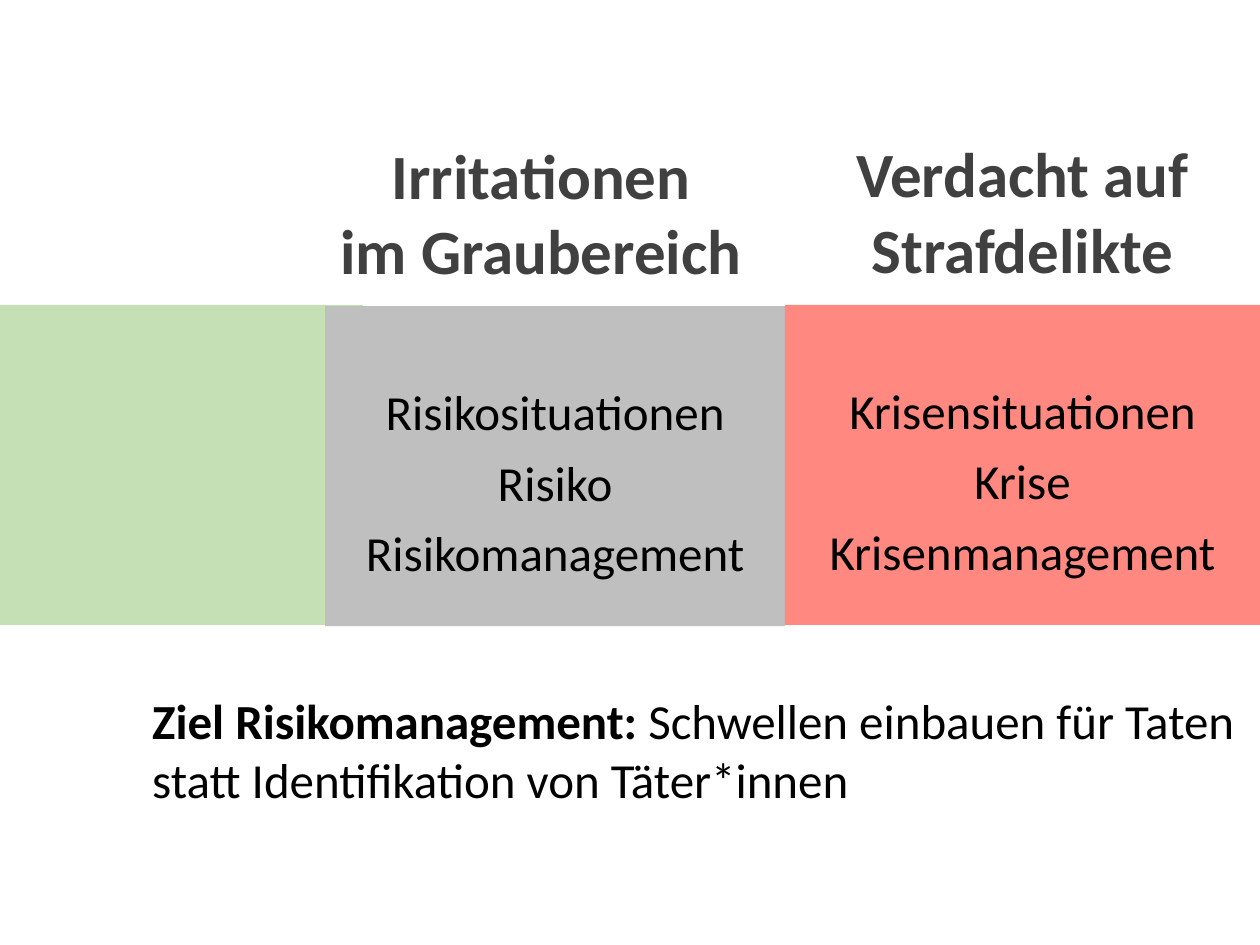
from dataclasses import dataclass

from lxml.etree import SubElement
from pptx import Presentation
from pptx.dml.color import RGBColor
from pptx.enum.shapes import MSO_SHAPE
from pptx.enum.text import MSO_ANCHOR, MSO_AUTO_SIZE, PP_ALIGN
from pptx.oxml.ns import qn
from pptx.util import Inches, Pt

COLUMNS, ROWS = 100, 75


@dataclass(frozen=True)
class Theme:
    font: str = "Calibri"
    heading_size: int = 36
    text_size: int = 28
    heading: str = "404040"
    text: str = "000000"
    green: str = "C5E0B4"
    grey: str = "BFBFBF"
    red: str = "FF6257"


@dataclass(frozen=True)
class Box:
    col: float
    row: float
    cols: float
    rows: float


@dataclass(frozen=True)
class Zone:
    box: Box
    fill: str
    opacity: int = 100
    terms: tuple[str, ...] = ()


@dataclass(frozen=True)
class Heading:
    placeholder: int
    box: Box
    text: str


THEME = Theme()

HEADINGS = (
    Heading(1, Box(21.7, 10.3, 42.5, 15.1), "Irritationen\vim Graubereich"),
    Heading(3, Box(59.9, 10.2, 42.5, 15.1), "Verdacht auf Strafdelikte"),
)

ZONES = (
    Zone(Box(-0.3, 24.2, 29.1, 25.4), THEME.green),
    Zone(Box(25.8, 24.3, 36.5, 25.4), THEME.grey,
         terms=("Risikosituationen", "Risiko", "Risikomanagement")),
    Zone(Box(62.3, 24.2, 37.7, 25.4), THEME.red, 75,
         ("Krisensituationen", "Krise", "Krisenmanagement")),
)

GOAL_BOX = Box(11.1, 55.5, 91.3, 12.3)


def place(prs, box: Box) -> tuple[int, int, int, int]:
    col, row = prs.slide_width / COLUMNS, prs.slide_height / ROWS
    return (round(box.col * col), round(box.row * row),
            round(box.cols * col), round(box.rows * row))


def add_text(p, text: str, *, size: int = THEME.text_size, color: str = THEME.text,
             bold: bool = False, align=PP_ALIGN.LEFT, before: float = 0,
             spacing: float = 1.0) -> None:
    p.alignment = align
    p.space_before = Pt(before)
    p.line_spacing = spacing
    for i, line in enumerate(text.split("\v")):
        if i:
            p.add_line_break()
        r = p.add_run()
        r.text = line
        r.font.name = THEME.font
        r.font.size = Pt(size)
        r.font.bold = bold
        r.font.color.rgb = RGBColor.from_string(color)


def add_heading(prs, s, heading: Heading) -> None:
    sp = s.placeholders[heading.placeholder]
    sp.left, sp.top, sp.width, sp.height = place(prs, heading.box)
    tf = sp.text_frame
    tf.word_wrap = True
    tf.auto_size = MSO_AUTO_SIZE.NONE
    tf.vertical_anchor = MSO_ANCHOR.TOP
    add_text(tf.paragraphs[0], heading.text, size=THEME.heading_size,
             color=THEME.heading, bold=True, align=PP_ALIGN.CENTER)


def add_zone(prs, s, zone: Zone) -> None:
    sp = s.shapes.add_shape(MSO_SHAPE.RECTANGLE, *place(prs, zone.box))
    sp.shadow.inherit = False
    sp.line.fill.background()
    sp.fill.solid()
    sp.fill.fore_color.rgb = RGBColor.from_string(zone.fill)
    if zone.opacity < 100:
        color = sp.fill._xPr.find(qn("a:solidFill"))[0]
        SubElement(color, qn("a:alpha")).set("val", str(zone.opacity * 1000))
    tf = sp.text_frame
    tf.word_wrap = True
    tf.vertical_anchor = MSO_ANCHOR.MIDDLE
    tf.margin_top = Inches(0.35)
    for i, term in enumerate(zone.terms):
        p = tf.add_paragraph() if i else tf.paragraphs[0]
        add_text(p, term, align=PP_ALIGN.CENTER, before=10 if i else 0, spacing=0.9)


def add_goal(prs, s) -> None:
    tf = s.shapes.add_textbox(*place(prs, GOAL_BOX)).text_frame
    tf.word_wrap = True
    tf.vertical_anchor = MSO_ANCHOR.MIDDLE
    tf.margin_bottom = Inches(0.48)
    p = tf.paragraphs[0]
    add_text(p, "Ziel Risikomanagement: ", bold=True)
    add_text(p, "Schwellen einbauen für Taten statt Identifikation von Täter*innen")


def main() -> None:
    prs = Presentation()
    prs.slide_width, prs.slide_height = Inches(10), Inches(7.5)
    s = prs.slides.add_slide(prs.slide_layouts.get_by_name("Comparison"))
    used = {heading.placeholder for heading in HEADINGS}
    for sp in list(s.placeholders):
        if sp.placeholder_format.idx not in used:
            sp.element.getparent().remove(sp.element)
    for heading in HEADINGS:
        add_heading(prs, s, heading)
    for zone in ZONES:
        add_zone(prs, s, zone)
    add_goal(prs, s)
    prs.save("out.pptx")


if __name__ == "__main__":
    main()
